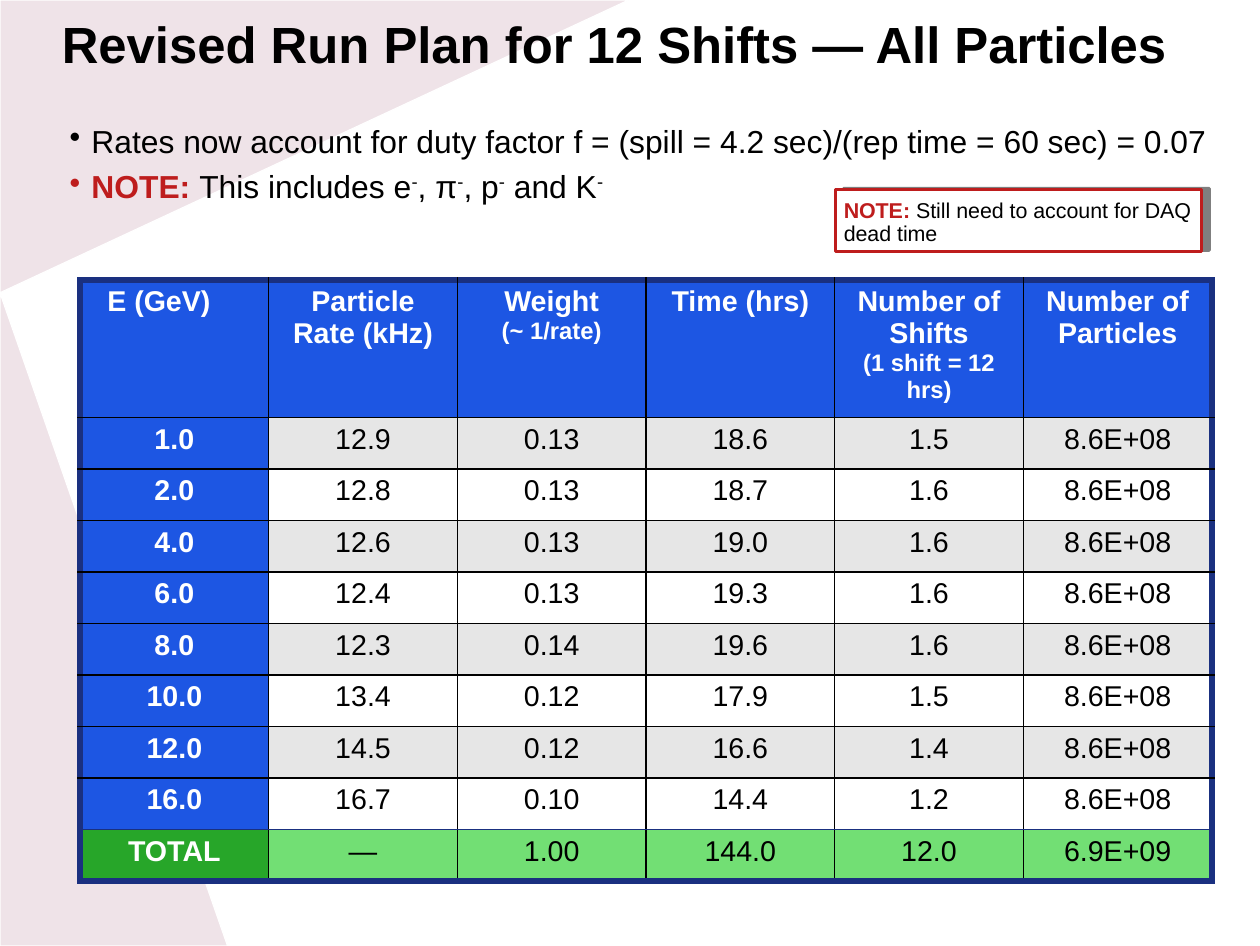
from lxml import etree
from pptx import Presentation
from pptx.dml.color import RGBColor
from pptx.enum.shapes import MSO_SHAPE
from pptx.enum.text import MSO_ANCHOR, PP_ALIGN
from pptx.oxml import parse_xml
from pptx.oxml.ns import nsdecls, qn
from pptx.util import Inches, Pt

RECTANGLE = MSO_SHAPE.RECTANGLE
TOP, MIDDLE = MSO_ANCHOR.TOP, MSO_ANCHOR.MIDDLE
LEFT, CENTER = PP_ALIGN.LEFT, PP_ALIGN.CENTER

BLACK = RGBColor(0x00, 0x00, 0x00)
WHITE = RGBColor(0xFF, 0xFF, 0xFF)
RED = RGBColor(0xBE, 0x1D, 0x1D)
PLUM = RGBColor(0x94, 0x47, 0x6B)
BLUE = RGBColor(0x1D, 0x56, 0xE3)
NAVY = RGBColor(0x1A, 0x30, 0x80)
GRAY = RGBColor(0xE6, 0xE6, 0xE6)
GREEN = RGBColor(0x27, 0xA6, 0x29)
LIGHT_GREEN = RGBColor(0x72, 0xDF, 0x74)

THIN, THICK = Pt(0.96), Pt(3.97)
HEADER_HEIGHT, ROW_HEIGHT, COLUMN_WIDTH = 1.12, 0.45, 1.65

HEADERS = [
    ["E (GeV)"],
    ["Particle Rate (kHz)"],
    ["Weight", "(~ 1/rate)"],
    ["Time (hrs)"],
    ["Number of Shifts", "(1 shift = 12 hrs)"],
    ["Number of Particles"],
]
RUN_PLAN = [
    ("1.0", "12.9", "0.13", "18.6", "1.5", "8.6E+08"),
    ("2.0", "12.8", "0.13", "18.7", "1.6", "8.6E+08"),
    ("4.0", "12.6", "0.13", "19.0", "1.6", "8.6E+08"),
    ("6.0", "12.4", "0.13", "19.3", "1.6", "8.6E+08"),
    ("8.0", "12.3", "0.14", "19.6", "1.6", "8.6E+08"),
    ("10.0", "13.4", "0.12", "17.9", "1.5", "8.6E+08"),
    ("12.0", "14.5", "0.12", "16.6", "1.4", "8.6E+08"),
    ("16.0", "16.7", "0.10", "14.4", "1.2", "8.6E+08"),
    ("TOTAL", "—", "1.00", "144.0", "12.0", "6.9E+09"),
]


class SlideBuilder:
    font_name = "Arial"
    inset = Inches(0.05)

    def __init__(self, slide):
        self.slide = slide

    def format_run(self, run, size, color=BLACK, bold=False, raised=False):
        run.font.name = self.font_name
        run.font.size = Pt(size)
        run.font.color.rgb = color
        run.font.bold = bold
        if raised:
            run.font._element.set("baseline", "31000")

    def wedge(self, points):
        start, *others = [(Inches(x), Inches(y)) for x, y in points]
        builder = self.slide.shapes.build_freeform(*start)
        builder.add_line_segments(others, close=True)
        shape = builder.convert_to_shape()
        shape.shadow.inherit = False
        shape.fill.solid()
        shape.fill.fore_color.rgb = PLUM
        color = shape._element.spPr.find(qn("a:solidFill"))[0]
        etree.SubElement(color, qn("a:alpha"), val="15000")
        shape.line.color.rgb = WHITE
        shape.line.width = Pt(0.75)

    def text(self, left, top, width, height, paragraphs, size,
             anchor=TOP, space_before=0):
        box = self.slide.shapes.add_textbox(
            Inches(left), Inches(top), Inches(width), Inches(height))
        frame = box.text_frame
        frame.word_wrap = True
        frame.vertical_anchor = anchor
        frame.margin_left = frame.margin_right = self.inset
        frame.margin_top = frame.margin_bottom = self.inset
        for index, runs in enumerate(paragraphs):
            paragraph = frame.add_paragraph() if index else frame.paragraphs[0]
            paragraph.alignment = LEFT
            paragraph.line_spacing = 0.9
            paragraph.space_before = Pt(space_before)
            for content, *style in runs:
                run = paragraph.add_run()
                run.text = content
                self.format_run(run, size, *style)
        return frame

    def bullet(self, paragraph, color):
        properties = paragraph._p.get_or_add_pPr()
        properties.set("marL", str(Inches(0.19)))
        properties.set("indent", str(-Inches(0.19)))
        bullet_color = etree.SubElement(properties, qn("a:buClr"))
        etree.SubElement(bullet_color, qn("a:srgbClr"), val=str(color))
        etree.SubElement(properties, qn("a:buChar"), char="•")

    def note_frame(self, left, top, width, height):
        shape = self.slide.shapes.add_shape(
            RECTANGLE, Inches(left), Inches(top), Inches(width), Inches(height))
        shape.fill.solid()
        shape.fill.fore_color.rgb = WHITE
        shape.line.color.rgb = RED
        shape.line.width = Pt(2)
        shape._element.spPr.append(parse_xml(
            f'<a:effectLst {nsdecls("a")}>'
            f'<a:outerShdw blurRad="0" dist="{Pt(5)}" dir="{350 * 60000}"'
            ' algn="ctr" rotWithShape="0"><a:srgbClr val="000000">'
            '<a:alpha val="50000"/></a:srgbClr></a:outerShdw></a:effectLst>'))

    def cell(self, cell, lines, fill, color, bold, borders):
        cell.text_frame.text = "\n".join(lines)
        for paragraph, size in zip(cell.text_frame.paragraphs, (18, 15)):
            paragraph.alignment = CENTER
            self.format_run(paragraph.runs[0], size, color, bold)
        cell.fill.solid()
        cell.fill.fore_color.rgb = fill
        properties = cell._tc.get_or_add_tcPr()
        for index, (side, (line_color, width)) in enumerate(borders.items()):
            properties.insert(index, parse_xml(
                f'<a:ln{side} {nsdecls("a")} w="{width}"><a:solidFill>'
                f'<a:srgbClr val="{line_color}"/></a:solidFill></a:ln{side}>'))

    def run_plan_table(self, left, top, headers, rows):
        contents = [headers] + [[[value] for value in row] for row in rows]
        last_row, last_column = len(rows), len(headers) - 1
        table = self.slide.shapes.add_table(
            last_row + 1, last_column + 1, Inches(left), Inches(top),
            Inches(COLUMN_WIDTH * len(headers)),
            Inches(HEADER_HEIGHT + ROW_HEIGHT * last_row)).table
        table.first_row = table.horz_banding = False
        for column in table.columns:
            column.width = Inches(COLUMN_WIDTH)
        outer, inner, total_rule = (NAVY, THICK), (BLACK, THIN), (NAVY, THIN)
        for r, row in enumerate(contents):
            table.rows[r].height = Inches(ROW_HEIGHT if r else HEADER_HEIGHT)
            for c, lines in enumerate(row):
                heading = r == 0 or c == 0
                if r == last_row:
                    fill = GREEN if heading else LIGHT_GREEN
                elif heading:
                    fill = BLUE
                else:
                    fill = GRAY if r % 2 else WHITE
                borders = {
                    "L": outer if c == 0 else inner,
                    "R": outer if c == last_column else inner,
                    "T": {0: outer, last_row: total_rule}.get(r, inner),
                    "B": {last_row: outer, last_row - 1: total_rule}.get(r, inner),
                }
                self.cell(table.cell(r, c), lines, fill,
                          WHITE if heading else BLACK, heading, borders)
        table.cell(0, 0).margin_right = Inches(0.37)


def main():
    presentation = Presentation()
    presentation.slide_width = Inches(11.02)
    presentation.slide_height = Inches(8.27)
    builder = SlideBuilder(
        presentation.slides.add_slide(presentation.slide_layouts[6]))

    builder.wedge([(0, 2.56), (1.99, 8.27), (0, 8.27)])
    builder.wedge([(0, 2.56), (5.5, 0), (0, 0)])
    builder.text(
        0.49, 0.03, 10.21, 0.77,
        [[("Revised Run Plan for 12 Shifts — All Particles", BLACK, True)]],
        32, anchor=MIDDLE)

    minus = ("-", BLACK, False, True)
    rates = [("Rates now account for duty factor f = (spill = 4.2 sec)/"
              "(rep time = 60 sec) = 0.07",)]
    particles = [("NOTE: ", RED, True), ("This includes e",), minus, (", π",),
                 minus, (", p",), minus, (" and K",), minus]
    points = builder.text(0.56, 1.05, 10.24, 0.75, [rates, particles], 20,
                          space_before=7)
    for paragraph, color in zip(points.paragraphs, (BLACK, RED)):
        builder.bullet(paragraph, color)

    builder.run_plan_table(0.7, 2.45, HEADERS, RUN_PLAN)
    builder.note_frame(7.31, 1.66, 3.2, 0.54)
    builder.text(
        7.33, 1.7, 3.17, 0.47,
        [[("NOTE:", RED, True), (" Still need to account for DAQ dead time",)]],
        13.5, space_before=7)
    presentation.save("out.pptx")


if __name__ == "__main__":
    main()
